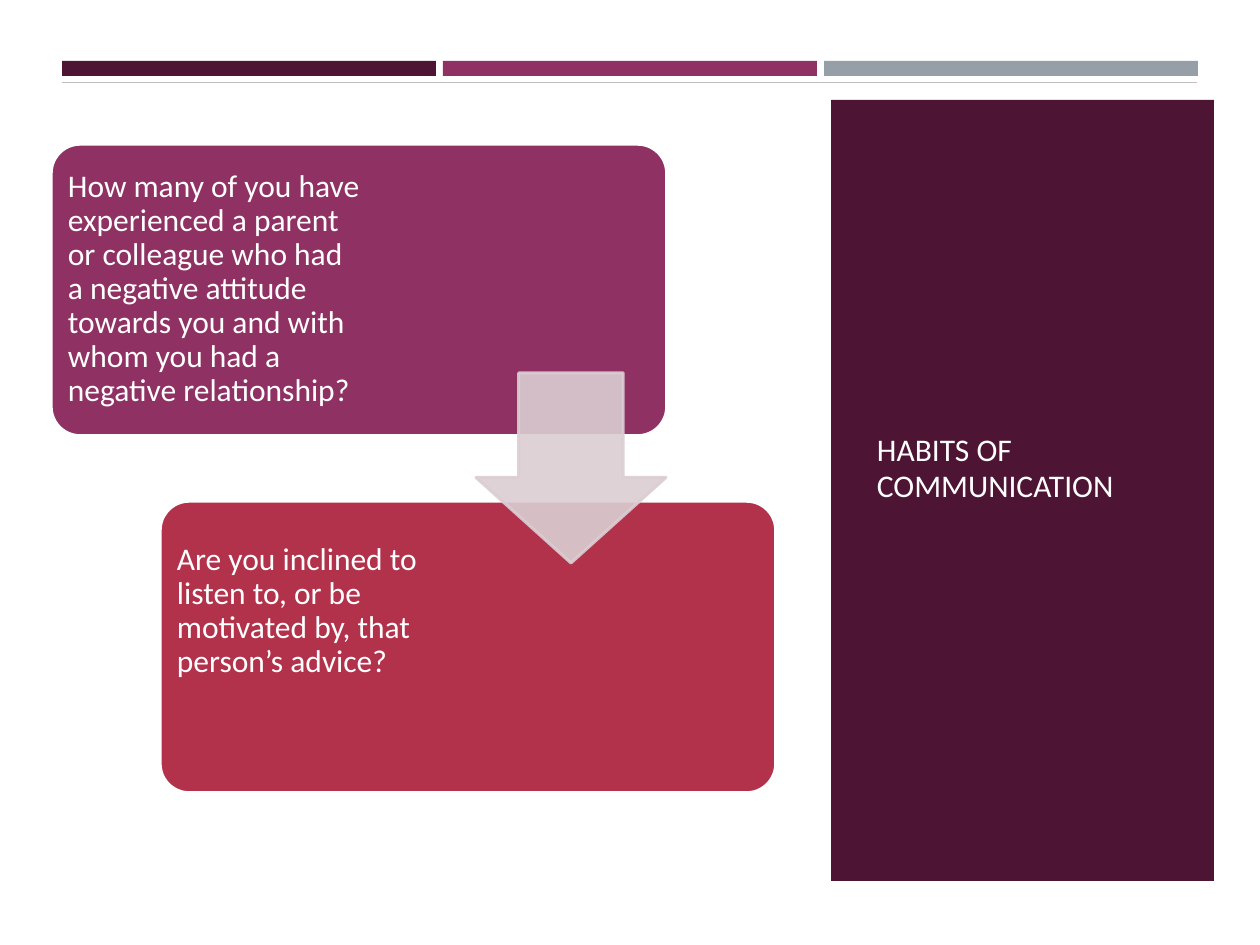
"""Build the "Habits of communication" slide."""
from lxml import etree
from pptx import Presentation
from pptx.dml.color import RGBColor
from pptx.enum import shapes, text
from pptx.oxml.ns import qn
from pptx.util import Emu, Pt

PX = 914400 / 126
COLORS = {
    "plum": "4D1434", "magenta": "903163", "gray": "969FA7", "red": "B2324B",
    "arrow": "DBCED3", "rule": "C4BCC0", "white": "FFFFFF", "title": "FFFEFF",
}
SHAPE = shapes.MSO_SHAPE


def add_block(kind, box, color, line=None, width=2):
    sp = slide.shapes.add_shape(kind, *[Emu(round(v * PX)) for v in box])
    sp.shadow.inherit = False
    sp.fill.solid()
    sp.fill.fore_color.rgb = RGBColor.from_string(COLORS[color])
    if line:
        sp.line.color.rgb = RGBColor.from_string(COLORS[line])
        sp.line.width = Pt(width)
    else:
        sp.line.fill.background()
    return sp


def add_text(box, words, color, inset, spacing):
    sp = slide.shapes.add_textbox(*[Emu(round(v * PX)) for v in box])
    tf = sp.text_frame
    tf.word_wrap = True
    tf.vertical_anchor = text.MSO_ANCHOR.MIDDLE
    tf.margin_left = tf.margin_right = Emu(round(inset * PX))
    tf.margin_top = tf.margin_bottom = Emu(round(9 * PX))
    p = tf.paragraphs[0]
    p.text = words
    p.line_spacing = spacing
    p.font.size = Pt(18)
    p.font.name = "Calibri"
    p.font.color.rgb = RGBColor.from_string(COLORS[color])


prs = Presentation()
prs.slide_width, prs.slide_height = Emu(round(1260 * PX)), Emu(round(945 * PX))
slide = prs.slides.add_slide(prs.slide_layouts[6])

for i, color in enumerate(["plum", "magenta", "gray"]):
    add_block(SHAPE.RECTANGLE, (62 + 381 * i, 61, 374, 15), color)

rule = slide.shapes.add_connector(
    shapes.MSO_CONNECTOR.STRAIGHT, *[Emu(round(v * PX)) for v in (62, 82, 1197, 82)])
rule.line.color.rgb = RGBColor.from_string(COLORS["rule"])
rule.line.width = Pt(0.5)
etree.SubElement(rule._element.spPr, qn("a:effectLst"))

add_block(SHAPE.RECTANGLE, (831, 100, 383, 781), "plum")
add_text((864, 144, 315, 649), "HABITS OF COMMUNICATION", "title", 13, 0.97)

cards = [
    (51, 144, "magenta", 314, 274,
     "How many of you have experienced a parent or colleague who had a negative "
     "attitude towards you and with whom you had a negative relationship?"),
    (160, 501, "red", 300, 204,
     "Are you inclined to listen to, or be motivated by, that person’s advice?"),
]
for x, y, color, width, height, words in cards:
    card = add_block(SHAPE.ROUNDED_RECTANGLE, (x, y, 616, 292), color, "white")
    card.adjustments[0] = 0.1
    add_text((x + 8, y + 8, width, height), words, "white", 9, 0.9)

arrow = add_block(SHAPE.DOWN_ARROW, (476, 373, 190, 190), "arrow", "arrow", 1.75)
arrow.adjustments[0], arrow.adjustments[1] = 0.55, 0.45
for clr in arrow._element.spPr.iter(qn("a:srgbClr")):
    etree.SubElement(clr, qn("a:alpha"), val="90000")

prs.save("out.pptx")
